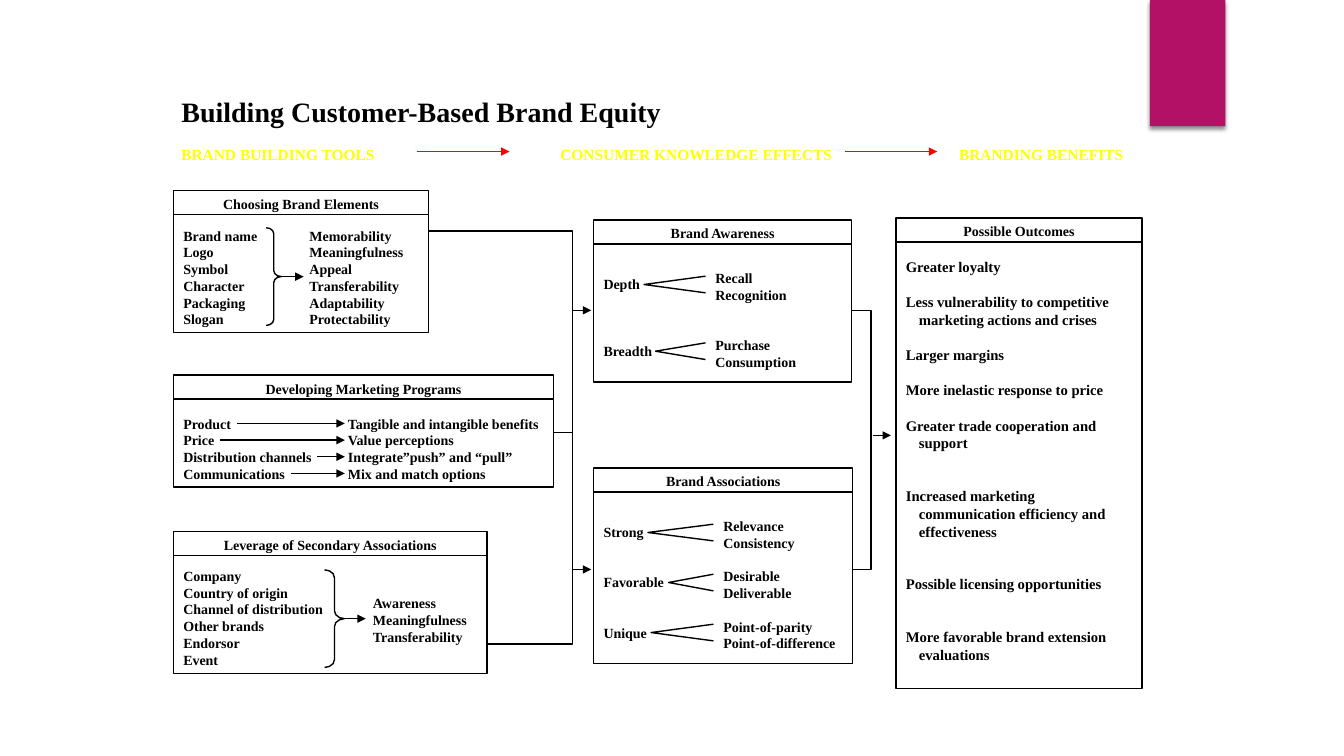
from dataclasses import dataclass

from lxml import etree
from pptx import Presentation
from pptx.dml.color import RGBColor
from pptx.enum.shapes import MSO_CONNECTOR, MSO_SHAPE
from pptx.enum.text import MSO_ANCHOR, MSO_AUTO_SIZE, PP_ALIGN
from pptx.oxml.ns import qn
from pptx.util import Cm, Pt

RECTANGLE, BRACE = MSO_SHAPE.RECTANGLE, MSO_SHAPE.RIGHT_BRACE
STRAIGHT = MSO_CONNECTOR.STRAIGHT
TOP, NO_FIT = MSO_ANCHOR.TOP, MSO_AUTO_SIZE.NONE
LEFT, CENTER = PP_ALIGN.LEFT, PP_ALIGN.CENTER


@dataclass(frozen=True)
class Theme:
    font: str = "Times New Roman"
    ink: RGBColor = RGBColor(0, 0, 0)
    paper: RGBColor = RGBColor(255, 255, 255)
    accent: RGBColor = RGBColor(0xB3, 0x11, 0x66)
    stage: RGBColor = RGBColor(255, 255, 0)
    flow: RGBColor = RGBColor(255, 0, 0)
    title_size: float = 20
    stage_size: float = 11
    outcome_size: float = 10.5
    body_size: float = 10
    leading: float = 1.2
    stroke: float = 1


THEME = Theme()
ROW = 0.42
HEADER = 0.61


def style_text(paragraph, size=THEME.body_size, color=THEME.ink, align=LEFT, gap=0):
    paragraph.alignment = align
    paragraph.line_spacing = Pt(size * THEME.leading)
    paragraph.space_before = Pt(gap)
    for run in paragraph.runs:
        run.font.name, run.font.size, run.font.bold = THEME.font, Pt(size), True
        run.font.color.rgb = color


def prepare_frame(shape, wrap=True):
    frame = shape.text_frame
    frame.word_wrap, frame.auto_size, frame.vertical_anchor = wrap, NO_FIT, TOP
    frame.margin_left = frame.margin_right = Cm(0.25)
    frame.margin_top = frame.margin_bottom = Cm(0.13)
    return frame


def add_lines(slide, x, y, width, height, lines, **style):
    """Unwrapped text box; lines are (text, gap before in points)."""
    frame = prepare_frame(
        slide.shapes.add_textbox(Cm(x), Cm(y), Cm(width), Cm(height)), wrap=False)
    frame.text = "\n".join(text for text, _ in lines)
    for paragraph, (_, gap) in zip(frame.paragraphs, lines):
        style_text(paragraph, gap=gap, **style)


def outline(shape):
    shape.shadow.inherit = False
    shape.line.color.rgb, shape.line.width = THEME.ink, Pt(THEME.stroke)


def add_line(slide, x1, y1, x2, y2, color=THEME.ink, arrow=True):
    line = slide.shapes.add_connector(STRAIGHT, Cm(x1), Cm(y1), Cm(x2), Cm(y2))
    line.line.color.rgb, line.line.width = color, Pt(THEME.stroke)
    properties = line._element.spPr
    if arrow:
        etree.SubElement(properties.find(qn("a:ln")), qn("a:tailEnd"), type="triangle")
    etree.SubElement(properties, qn("a:effectLst"))


def add_path(slide, start, *points):
    builder = slide.shapes.build_freeform(Cm(start[0]), Cm(start[1]))
    builder.add_line_segments([(Cm(x), Cm(y)) for x, y in points], close=False)
    path = builder.convert_to_shape()
    path.fill.background()
    outline(path)


def add_brace(slide, x, y, width, height, arrow_end):
    brace = slide.shapes.add_shape(BRACE, Cm(x), Cm(y), Cm(width), Cm(height))
    brace.adjustments[0] = 0.4
    brace.fill.background()
    outline(brace)
    middle = y + height / 2
    add_line(slide, x + width, middle, arrow_end, middle)


def add_panel(slide, box, heading, items, tab=None, hanging=0, size=THEME.body_size):
    """Headed frame; items are (text, gap before in points)."""
    x, y, width, height = box
    panel = slide.shapes.add_shape(RECTANGLE, Cm(x), Cm(y), Cm(width), Cm(height))
    panel.fill.solid()
    panel.fill.fore_color.rgb = THEME.paper
    outline(panel)
    frame = prepare_frame(panel)
    frame.text = "\n".join([heading] + [text for text, _ in items])
    style_text(frame.paragraphs[0], align=CENTER)
    for paragraph, (_, gap) in zip(frame.paragraphs[1:], items):
        properties = paragraph._p.get_or_add_pPr()
        if hanging:
            properties.set("marL", str(Cm(hanging)))
            properties.set("indent", str(-Cm(hanging)))
        if tab:
            tabs = etree.SubElement(properties, qn("a:tabLst"))
            etree.SubElement(tabs, qn("a:tab"), pos=str(Cm(tab)), algn="l")
        style_text(paragraph, size=size, gap=gap)
    add_line(slide, x, y + HEADER, x + width, y + HEADER, arrow=False)


def spaced(texts, first_gap):
    return [(text, 0 if index else first_gap) for index, text in enumerate(texts)]


def brand_elements(slide, box):
    pairs = ["Brand name\tMemorability", "Logo\tMeaningfulness", "Symbol\tAppeal",
             "Character\tTransferability", "Packaging\tAdaptability",
             "Slogan\tProtectability"]
    add_panel(slide, box, "Choosing Brand Elements", spaced(pairs, 10.5), tab=3.18)
    x, y = box[:2]
    add_brace(slide, x + 2.34, y + 0.94, 0.38, 2.46, x + 3.28)


def marketing_programs(slide, box):
    programs = [("Product", "Tangible and intangible benefits", 1.6),
                ("Price", "Value perceptions", 1.17),
                ("Distribution channels", "Integrate”push” and “pull”", 3.63),
                ("Communications", "Mix and match options", 2.97)]
    pairs = [f"{tool}\t{aim}" for tool, aim, _ in programs]
    add_panel(slide, box, "Developing Marketing Programs", spaced(pairs, 13), tab=4.15)
    x, y = box[:2]
    for index, (_, _, start) in enumerate(programs):
        level = y + 1.22 + index * ROW
        add_line(slide, x + start, level, x + 4.32, level)


def secondary_associations(slide, box):
    sources = ["Company", "Country of origin", "Channel of distribution",
               "Other brands", "Endorsor", "Event"]
    add_panel(slide, box, "Leverage of Secondary Associations", spaced(sources, 10))
    x, y = box[:2]
    add_brace(slide, x + 3.81, y + 0.97, 0.5, 2.46, x + 4.85)
    traits = ["Awareness", "Meaningfulness", "Transferability"]
    add_lines(slide, x + 4.78, y + 1.47, 2.87, 1.52, spaced(traits, 0))


def knowledge_effects(slide, box, heading, rows, row_lines, effects_left):
    """Panel whose rows (label, fork tip, two effects) are row_lines text lines apart."""
    x, y, width, height = box
    line = THEME.body_size * THEME.leading
    labels = [(label, (row_lines - 1) * line if index else 2 * line)
              for index, (label, _, _) in enumerate(rows)]
    add_panel(slide, box, heading, labels)
    effects = []
    for index, (_, tip, pair) in enumerate(rows):
        level = y + 1.63 + index * row_lines * ROW
        end = x + effects_left
        add_path(slide, (end, level - 0.21), (x + tip, level), (end, level + 0.21))
        effects += spaced(pair, (row_lines - 2) * line if index else 0)
    add_lines(slide, x + effects_left, y + 1.12, width - effects_left - 0.1,
              height - 1.3, effects)


def possible_outcomes(slide, box):
    line = THEME.outcome_size * THEME.leading
    outcomes = [("Greater loyalty", 1),
                ("Less vulnerability to competitive marketing actions and crises", 1),
                ("Larger margins", 1),
                ("More inelastic response to price", 1),
                ("Greater trade cooperation and support", 1),
                ("Increased marketing communication efficiency and effectiveness", 2),
                ("Possible licensing opportunities", 2),
                ("More favorable brand extension evaluations", 2)]
    add_panel(slide, box, "Possible Outcomes",
              [(text, lines * line) for text, lines in outcomes],
              hanging=0.33, size=THEME.outcome_size)


def slide_header(slide, x, y):
    title = slide.shapes.title
    title.left, title.top, title.width, title.height = Cm(x), Cm(y), Cm(23), Cm(1.15)
    prepare_frame(title).text = "Building Customer-Based Brand Equity"
    style_text(title.text_frame.paragraphs[0], size=THEME.title_size)
    stages = [("BRAND BUILDING TOOLS", 0, 5.5), ("CONSUMER KNOWLEDGE EFFECTS", 9.55, 7.5),
              ("BRANDING BENEFITS", 19.6, 4.8)]
    for stage, offset, width in stages:
        add_lines(slide, x + offset, y + 1.29, width, 0.75, [(stage, 0)],
                  size=THEME.stage_size, color=THEME.stage)
    for offset in (6.2, 16.98):
        add_line(slide, x + offset, y + 1.58, x + offset + 2.32, y + 1.58, THEME.flow)


def accent_tab(slide, x, y, width, height):
    tab = slide.shapes.add_shape(RECTANGLE, Cm(x), Cm(y), Cm(width), Cm(height))
    tab.fill.solid()
    tab.fill.fore_color.rgb = THEME.accent
    tab.line.fill.background()
    tab.shadow.inherit = False
    shadow = etree.SubElement(tab._element.spPr.find(qn("a:effectLst")), qn("a:outerShdw"),
                              blurRad=str(Pt(3)), dist=str(Pt(2)), dir="5400000")
    shade = etree.SubElement(shadow, qn("a:srgbClr"), val="000000")
    etree.SubElement(shade, qn("a:alpha"), val="45000")


def flow_lines(slide):
    """Brackets that gather the tools and the effects, with their arrows."""
    tools, effects, awareness, associations = 14.43, 21.95, 7.82, 14.35
    add_path(slide, (10.8, 5.82), (tools, 5.82), (tools, 16.23), (12.27, 16.23))
    add_path(slide, (21.46, awareness), (effects, awareness),
             (effects, associations), (21.49, associations))
    add_line(slide, 13.95, 10.9, tools, 10.9, arrow=False)
    for level in (awareness, associations):
        add_line(slide, tools, level, 14.9, level)
    add_line(slide, 22, 10.97, 22.45, 10.97)


def main():
    deck = Presentation()
    deck.slide_width, deck.slide_height = Cm(33.87), Cm(19.05)
    slide = deck.slides.add_slide(deck.slide_layouts[5])
    accent_tab(slide, 28.98, 0, 1.9, 3.18)
    slide_header(slide, 4.32, 2.24)
    flow_lines(slide)
    brand_elements(slide, (4.37, 4.8, 6.43, 3.58))
    marketing_programs(slide, (4.37, 9.45, 9.58, 2.82))
    secondary_associations(slide, (4.37, 13.39, 7.9, 3.58))
    knowledge_effects(slide, (14.96, 5.54, 6.5, 4.09), "Brand Awareness", [
        ("Depth", 1.27, ["Recall", "Recognition"]),
        ("Breadth", 1.56, ["Purchase", "Consumption"])], 4, 2.82)
    knowledge_effects(slide, (14.96, 11.79, 6.53, 4.93), "Brand Associations", [
        ("Strong", 1.37, ["Relevance", "Consistency"]),
        ("Favorable", 1.89, ["Desirable", "Deliverable"]),
        ("Unique", 1.45, ["Point-of-parity", "Point-of-difference"])], 3, 3.02)
    possible_outcomes(slide, (22.58, 5.49, 6.2, 11.86))
    deck.save("out.pptx")


if __name__ == "__main__":
    main()
